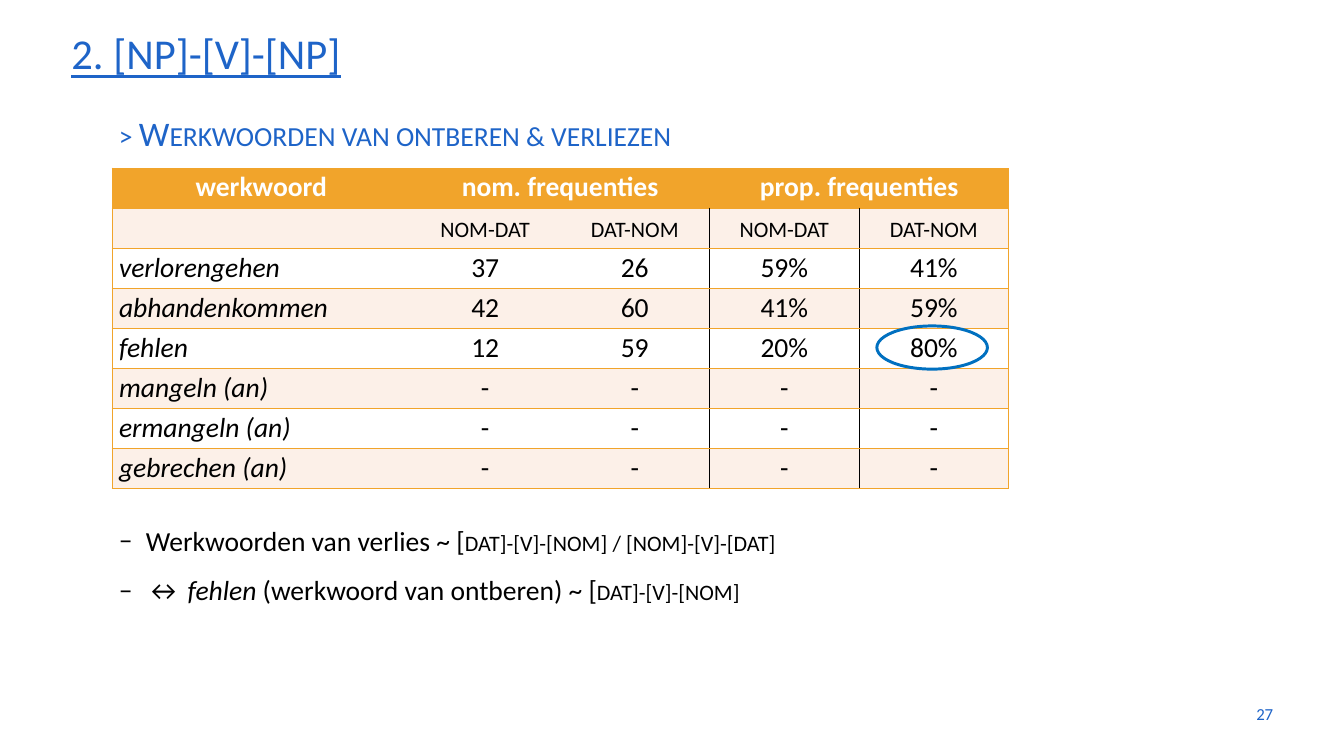
from lxml import etree
from pptx import Presentation
from pptx.dml.color import RGBColor
from pptx.enum.shapes import MSO_SHAPE
from pptx.enum.text import MSO_ANCHOR, PP_ALIGN
from pptx.oxml.ns import qn
from pptx.util import Inches, Pt

LEFT, MID, RIGHT = PP_ALIGN.LEFT, PP_ALIGN.CENTER, PP_ALIGN.RIGHT
TOP, CENTER = MSO_ANCHOR.TOP, MSO_ANCHOR.MIDDLE
OVAL = MSO_SHAPE.OVAL

THEME = {
    "font": "Calibri",
    "blue": "1E64C8", "ring": "0070C0", "gold": "F1A42B",
    "pale": "FCF0E8", "white": "FFFFFF", "black": "000000",
    "title": 54, "head": 35, "body": 28, "page": 17.1,
}

# Each run is (text, format)
SMALL, ITALIC, BOLD, PLAIN = {"caps": True}, {"italic": True}, {"bold": True}, {}
TITLE = [[("2. [np]-[v]-[np]", {"caps": True, "underline": True})]]
HEAD = [[("> Werkwoorden van ontberen & verliezen", SMALL)]]
PAGE = [[("27", PLAIN)]]
NOTES = [
    [("Werkwoorden van verlies ~ [", PLAIN),
     ("dat]-[v]-[nom] / [nom]-[v]-[dat]", SMALL)],
    [("↔ ", PLAIN), ("fehlen", ITALIC),
     (" (werkwoord van ontberen) ~ [", PLAIN), ("dat]-[v]-[nom]", SMALL)],
]
ROWS = [
    ["werkwoord", "nom. frequenties", "", "prop. frequenties", ""],
    ["", "nom-dat", "dat-nom", "nom-dat", "dat-nom"],
    ["verlorengehen", "37", "26", "59%", "41%"],
    ["abhandenkommen", "42", "60", "41%", "59%"],
    ["fehlen", "12", "59", "20%", "80%"],
    ["mangeln (an)", "-", "-", "-", "-"],
    ["ermangeln (an)", "-", "-", "-", "-"],
    ["gebrechen (an)", "-", "-", "-", "-"],
]
SPANS = [(1, 2), (3, 4)]
WIDTHS = [4.21, 2.11, 2.11, 2.11, 2.11]
GRID = (1.58, 2.37, sum(WIDTHS), 4.53)
RING = (12.37, 4.6, 1.56, 0.61)


def color(name):
    return RGBColor.from_string(THEME[name])


def add_runs(para, runs, size, hue):
    for text, form in runs:
        run = para.add_run()
        run.text = text
        look = {"name": THEME["font"], "size": Pt(THEME[size]), **form}
        if look.pop("caps", False):
            run._r.get_or_add_rPr().set("cap", "small")
        for key, value in look.items():
            setattr(run.font, key, value)
        run.font.color.rgb = color(hue)


def add_dash(para):
    """Give the paragraph a dash bullet with a hanging indent."""
    props = para._p.get_or_add_pPr()
    props.set("marL", str(Inches(0.38)))
    props.set("indent", str(-Inches(0.38)))
    etree.SubElement(props, qn("a:buFont")).set("typeface", THEME["font"])
    etree.SubElement(props, qn("a:buChar")).set("char", "–")


def add_text(slide, box, paras, size, hue, line=1.0, align=LEFT,
             anchor=TOP, dash=False):
    frame = slide.shapes.add_textbox(*map(Inches, box)).text_frame
    frame.word_wrap = True
    frame.vertical_anchor = anchor
    for i, runs in enumerate(paras):
        para = frame.paragraphs[0] if i == 0 else frame.add_paragraph()
        para.alignment = align
        para.line_spacing = line
        if dash:
            add_dash(para)
        add_runs(para, runs, size, hue)


def add_edge(cell, side, hue):
    """Draw one cell border, or clear it when hue is None."""
    edge = etree.SubElement(cell._tc.get_or_add_tcPr(), qn("a:ln" + side))
    edge.set("w", str(Pt(1)))
    if hue is None:
        etree.SubElement(edge, qn("a:noFill"))
        return
    fill = etree.SubElement(edge, qn("a:solidFill"))
    etree.SubElement(fill, qn("a:srgbClr")).set("val", THEME[hue])


def edge_hue(row, line):
    """Colour of the vertical rule at the given column line."""
    if line in (0, len(WIDTHS)):
        return "gold"
    return "black" if row > 0 and line >= 3 else None


def fill_cell(cell, text, row, col):
    hues = {"L": edge_hue(row, col), "R": edge_hue(row, col + 1),
            "T": "gold", "B": "gold"}
    for side, hue in hues.items():
        add_edge(cell, side, hue)
    cell.fill.solid()
    cell.fill.fore_color.rgb = color(
        "gold" if row == 0 else "pale" if row % 2 else "white")
    cell.margin_top = cell.margin_bottom = Inches(0.04)
    para = cell.text_frame.paragraphs[0]
    para.alignment = LEFT if col == 0 and row > 1 else MID
    para.font.size = Pt(THEME["body"])
    form = (BOLD if row == 0 else SMALL if row == 1
            else ITALIC if col == 0 else PLAIN)
    if text:
        add_runs(para, [(text, form)], "body", "black" if row else "white")


def add_grid(slide):
    table = slide.shapes.add_table(
        len(ROWS), len(WIDTHS), *map(Inches, GRID)).table
    for col, width in zip(table.columns, WIDTHS):
        col.width = Inches(width)
    for row in table.rows:
        row.height = Inches(GRID[3] / len(ROWS))
    for first, last in SPANS:
        table.cell(0, first).merge(table.cell(0, last))
    for r, texts in enumerate(ROWS):
        for c, text in enumerate(texts):
            fill_cell(table.cell(r, c), text, r, c)


def add_ring(slide):
    ring = slide.shapes.add_shape(OVAL, *map(Inches, RING))
    ring.shadow.inherit = False
    ring.fill.background()
    ring.line.color.rgb = color("ring")
    ring.line.width = Pt(3)


def main():
    deck = Presentation()
    deck.slide_width, deck.slide_height = Inches(18.96), Inches(10.67)
    slide = deck.slides.add_slide(deck.slide_layouts[6])
    add_text(slide, (0.91, 0.28, 17.18, 0.94), TITLE, "title", "blue", 0.9)
    add_text(slide, (17.05, 9.79, 1.01, 0.57), PAGE, "page", "blue",
             align=RIGHT, anchor=CENTER)
    add_text(slide, (1.58, 1.42, 9.28, 0.75), HEAD, "head", "blue", 1.2)
    add_text(slide, (1.58, 7.11, 11.38, 1.43), NOTES, "body", "black", 1.5,
             dash=True)
    add_grid(slide)
    add_ring(slide)
    deck.save("out.pptx")


if __name__ == "__main__":
    main()
